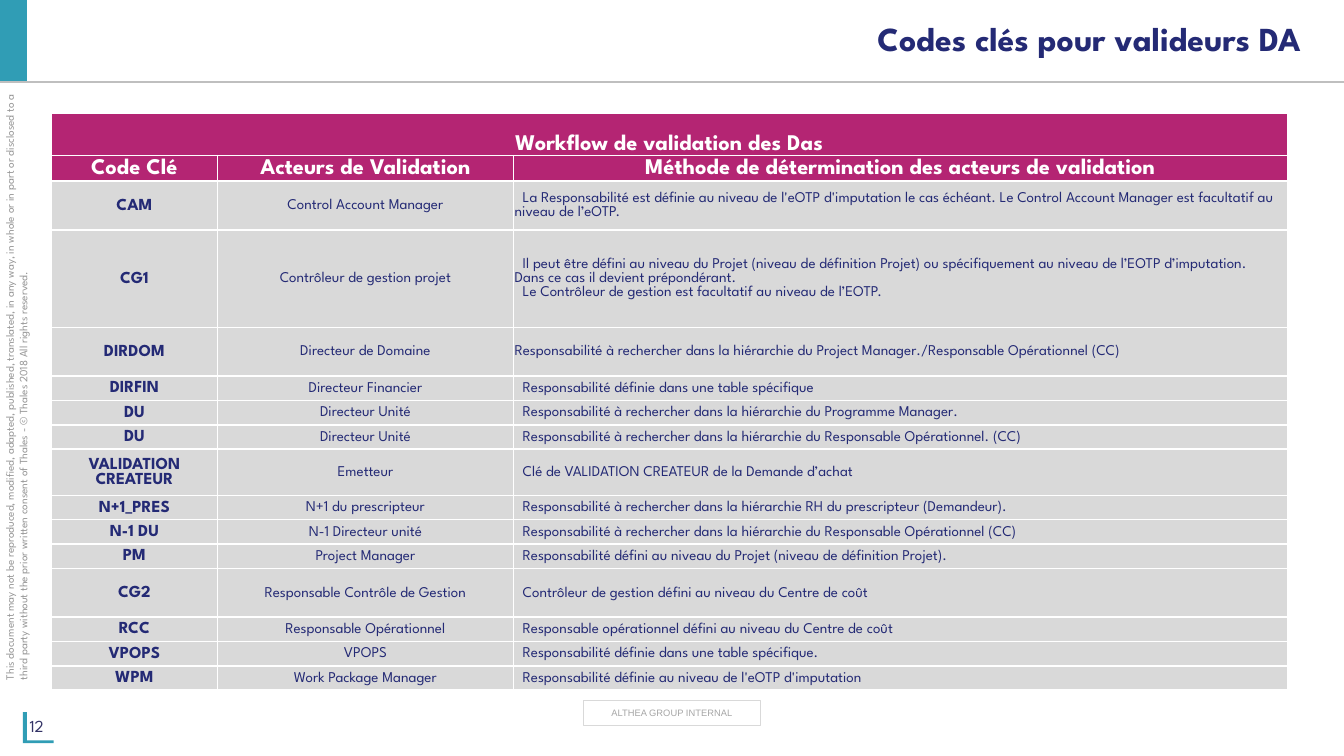
from lxml import etree
from pptx import Presentation
from pptx.dml.color import RGBColor
from pptx.enum.shapes import MSO_CONNECTOR, MSO_SHAPE
from pptx.enum.text import MSO_ANCHOR as Anchor, PP_ALIGN as Align
from pptx.oxml.ns import qn
from pptx.util import Inches, Pt

# Content
TITLE = "Codes clés pour valideurs DA"
PAGE = "12"
MARKING = "ALTHEA GROUP INTERNAL"
COPYRIGHT = (
    "This document may not be reproduced, modified, adapted, published, translated, "
    "in any way, in whole or in part or disclosed to a third party without the prior "
    "written consent of Thales - © Thales 2018 All rights reserved."
)
BANNER = "Workflow de validation des Das"
HEADINGS = ("Code Clé", "Acteurs de Validation",
            "Méthode de détermination des acteurs de validation")
# Height in grid units, code, actor, method
ROWS = [
    (2, "CAM", "Control Account Manager",
     "La Responsabilité est définie au niveau de l'eOTP d'imputation le cas échéant. "
     "Le Control Account Manager est facultatif au niveau de l’eOTP."),
    (4, "CG1", "Contrôleur de gestion projet",
     "Il peut être défini au niveau du Projet (niveau de définition Projet) ou "
     "spécifiquement au niveau de l’EOTP d’imputation.\vDans ce cas il devient "
     "prépondérant.\nLe Contrôleur de gestion est facultatif au niveau de l’EOTP."),
    (2, "DIRDOM", "Directeur de Domaine",
     "Responsabilité à rechercher dans la hiérarchie du Project Manager./"
     "Responsable Opérationnel (CC)"),
    (1, "DIRFIN", "Directeur Financier",
     "Responsabilité définie dans une table spécifique"),
    (1, "DU", "Directeur Unité",
     "Responsabilité à rechercher dans la hiérarchie du Programme Manager."),
    (1, "DU", "Directeur Unité",
     "Responsabilité à rechercher dans la hiérarchie du Responsable Opérationnel. (CC)"),
    (1.9, "VALIDATION CREATEUR", "Emetteur",
     "Clé de VALIDATION CREATEUR de la Demande d’achat"),
    (1, "N+1_PRES", "N+1 du prescripteur",
     "Responsabilité à rechercher dans la hiérarchie RH du prescripteur (Demandeur)."),
    (1, "N-1 DU", "N-1 Directeur unité",
     "Responsabilité à rechercher dans la hiérarchie du Responsable Opérationnel (CC)"),
    (1, "PM", "Project Manager",
     "Responsabilité défini au niveau du Projet (niveau de définition Projet)."),
    (2, "CG2", "Responsable Contrôle de Gestion",
     "Contrôleur de gestion défini au niveau du Centre de coût"),
    (1, "RCC", "Responsable Opérationnel",
     "Responsable opérationnel défini au niveau du Centre de coût"),
    (1, "VPOPS", "VPOPS", "Responsabilité définie dans une table spécifique."),
    (1, "WPM", "Work Package Manager",
     "Responsabilité définie au niveau de l'eOTP d'imputation"),
]
FLUSH = {"DIRDOM"}  # methods without a first-line indent

# Format
W = 10
H = W * 9 / 16
TEAL, NAVY, MAGENTA, GREY, WHITE = "309DB5", "242A75", "B42573", "D9D9D9", "FFFFFF"
FONT = "League Spartan"
TABLE = (0.38, 0.84, 9.2, 4.29)
COLS = (1.24, 2.2, 5.76)
UNITS = [1.75, 1] + [row[0] for row in ROWS]
INDENT = 0.06
HEAD = dict(size=12, bold=True, color=WHITE)
BODY = (dict(size=9, bold=True, color=NAVY), dict(size=8, color=NAVY),
        dict(size=8, color=NAVY, align=Align.LEFT))


def rgb(value):
    return RGBColor.from_string(value)


def box(at):
    return [Inches(v) for v in at]


def paint(s, fill, line=None, width=0.5):
    s.shadow.inherit = False
    s.fill.solid()
    s.fill.fore_color.rgb = rgb(fill)
    if line:
        s.line.color.rgb = rgb(line)
        s.line.width = Pt(width)
    else:
        s.line.fill.background()


def write(tf, text, size, color, bold=False, name=FONT, align=Align.LEFT,
          indent=0, spacing=None):
    tf.word_wrap = True
    tf.text = text
    for p in tf.paragraphs:
        p.alignment = align
        p.line_spacing = spacing
        if indent:
            pPr = p._p.get_or_add_pPr()
            pPr.set("marL", "0")
            pPr.set("indent", str(Inches(indent)))
        for r in p.runs:
            for key, value in dict(size=Pt(size), bold=bold, name=name).items():
                setattr(r.font, key, value)
            r.font.color.rgb = rgb(color)


def margins(target, left, top, right, bottom):
    for side, v in dict(left=left, top=top, right=right, bottom=bottom).items():
        setattr(target, f"margin_{side}", Inches(v))


def add_text(sl, at, text, inset, **fmt):
    s = sl.shapes.add_textbox(*box(at))
    write(s.text_frame, text, **fmt)
    margins(s.text_frame, *inset)
    s.text_frame.vertical_anchor = Anchor.MIDDLE
    return s


def finish_cell(cell):
    margins(cell, 0.01, 0.01, 0.01, 0)
    tcPr = cell._tc.get_or_add_tcPr()
    for i, side in enumerate(("lnL", "lnR", "lnT", "lnB")):
        ln = etree.Element(qn(f"a:{side}"), w=str(Pt(1)))
        fill = etree.SubElement(ln, qn("a:solidFill"))
        etree.SubElement(fill, qn("a:srgbClr"), val=WHITE)
        tcPr.insert(i, ln)


def fill_cell(cell, text, fill, anchor=Anchor.MIDDLE, **fmt):
    write(cell.text_frame, text, **{"align": Align.CENTER, **fmt})
    cell.vertical_anchor = anchor
    cell.fill.solid()
    cell.fill.fore_color.rgb = rgb(fill)


def add_frame(sl):
    # Header block and rule
    paint(sl.shapes.add_shape(MSO_SHAPE.RECTANGLE, *box((0, 0, 0.2, 0.61))), TEAL)
    rule = sl.shapes.add_connector(MSO_CONNECTOR.STRAIGHT, *box((0, 0.61, W, 0.61)))
    rule.line.color.rgb = rgb("BFBFBF")
    rule.line.width = Pt(0.75)
    etree.SubElement(rule._element.spPr, qn("a:effectLst"))

    # Vertical copyright line
    s = add_text(sl, (-2.1, 2.74, 4.44, 0.2), COPYRIGHT, (0, 0, 0, 0),
                 size=6, color="969696")
    s.rotation = 270

    # Page number and its corner bracket
    add_text(sl, (0.15, 5.25, 0.86, 0.3), PAGE, (0.07, 0.04, 0.07, 0.04),
             size=9, color="333366")
    corner = [(0.2, 5.3), (0.17, 5.3), (0.17, 5.53), (0.4, 5.53), (0.4, 5.51), (0.2, 5.51)]
    points = [box(pt) for pt in corner]
    fb = sl.shapes.build_freeform(*points[0])
    fb.add_line_segments(points[1:], close=True)
    paint(fb.convert_to_shape(), TEAL)

    # Confidentiality marking
    s = sl.shapes.add_shape(MSO_SHAPE.RECTANGLE, *box((4.34, 5.21, 1.32, 0.19)))
    paint(s, WHITE, GREY)
    color = s._element.spPr.find(qn("a:solidFill"))[0]
    etree.SubElement(color, qn("a:alpha"), val="50000")
    write(s.text_frame, MARKING, size=5, color="A6A6A6", name="Arial", align=Align.CENTER)
    s.text_frame.vertical_anchor = Anchor.MIDDLE


def add_title(sl):
    s = sl.shapes.title
    s.left, s.top, s.width, s.height = box((0.29, 0, 9.49, 0.61))
    write(s.text_frame, TITLE, size=18, color=NAVY, bold=True, align=Align.RIGHT,
          spacing=0.9)
    s.text_frame.vertical_anchor = Anchor.MIDDLE


def add_workflow(sl):
    table = sl.shapes.add_table(len(UNITS), len(COLS), *box(TABLE)).table
    table.horz_banding = False
    for col, width in zip(table.columns, COLS):
        col.width = Inches(width)
    for row, units in zip(table.rows, UNITS):
        row.height = Inches(TABLE[3] * units / sum(UNITS))

    # Banner and headings
    table.cell(0, 0).merge(table.cell(0, len(COLS) - 1))
    fill_cell(table.cell(0, 0), BANNER, MAGENTA, Anchor.BOTTOM, **HEAD)
    for c, text in enumerate(HEADINGS):
        fill_cell(table.cell(1, c), text, MAGENTA, spacing=0.9, **HEAD)

    # Body
    for i, (_, *texts) in enumerate(ROWS, start=2):
        for c, (text, fmt) in enumerate(zip(texts, BODY)):
            indent = INDENT if c == 2 and texts[0] not in FLUSH else 0
            fill_cell(table.cell(i, c), text, GREY, indent=indent, **fmt)
    for cell in table.iter_cells():
        finish_cell(cell)


def main():
    prs = Presentation()
    prs.slide_width, prs.slide_height = Inches(W), Inches(H)
    sl = prs.slides.add_slide(prs.slide_layouts[5])
    add_frame(sl)
    add_title(sl)
    add_workflow(sl)
    prs.save("out.pptx")


if __name__ == "__main__":
    main()
